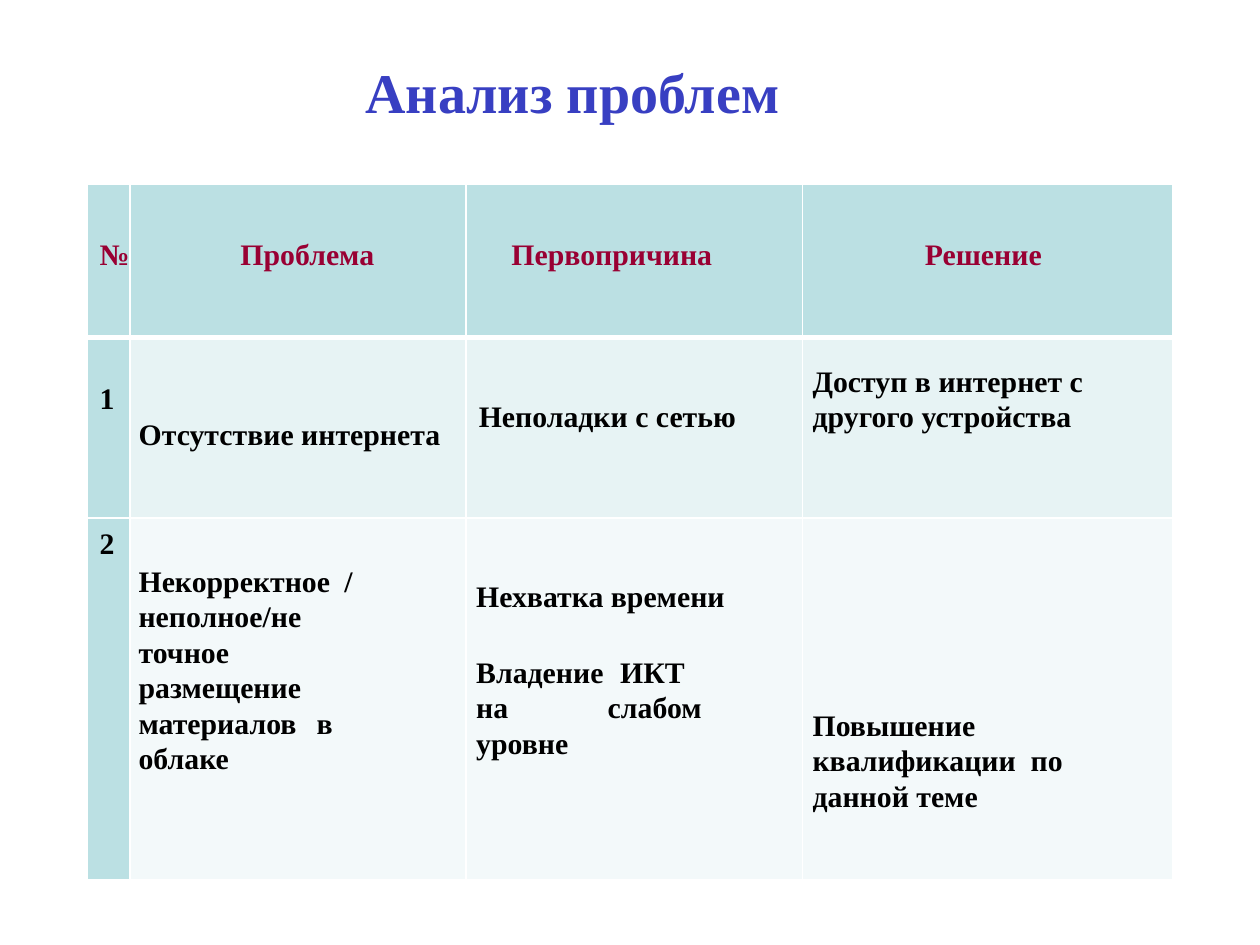
from dataclasses import dataclass

from lxml import etree
from pptx import Presentation
from pptx.dml.color import RGBColor
from pptx.enum import text
from pptx.oxml import ns
from pptx.util import Inches, Pt


@dataclass(frozen=True)
class Theme:
    font: str = "Times New Roman"
    title_size: float = 32
    table_size: float = 17
    title: str = "383FC2"
    heading: str = "990033"
    body: str = "000000"
    accent: str = "BBE0E3"
    light: str = "E7F3F4"
    pale: str = "F3F9FA"
    border: str = "FFFFFF"


@dataclass(frozen=True)
class Para:
    words: str
    left: float = 0.08
    right: float = 0
    align: text.PP_ALIGN = text.PP_ALIGN.LEFT
    before: float = 0


@dataclass(frozen=True)
class Entry:
    paras: tuple
    anchor: text.MSO_ANCHOR = text.MSO_ANCHOR.MIDDLE
    top: float = 0.06


THEME = Theme()
CENTER, JUSTIFY = text.PP_ALIGN.CENTER, text.PP_ALIGN.JUSTIFY
TOP, BOTTOM = text.MSO_ANCHOR.TOP, text.MSO_ANCHOR.BOTTOM
COLUMNS = (0.34, 2.67, 2.67, 2.94)
ROWS = (1.22, 1.43, 2.87)
ENTRIES = (
    (
        Entry((Para("№", 0.1),), BOTTOM),
        Entry((Para("Проблема", 0.16, align=CENTER),), BOTTOM),
        Entry((Para("Первопричина", 0.36),), BOTTOM),
        Entry((Para("Решение", 0, 0.06, CENTER),), BOTTOM),
    ),
    (
        Entry((Para("1", 0.1),)),
        Entry((Para("Отсутствие интернета", 0.07),), BOTTOM),
        Entry((Para("Неполадки с сетью", 0.1),), top=0.34),
        Entry((Para("Доступ в интернет с другого устройства"),)),
    ),
    (
        Entry((Para("2", 0.1),), TOP),
        Entry((Para("Некорректное /неполное/не точное  размещение  материалов в  облаке",
                    0.07, 0.89, JUSTIFY),)),
        Entry((Para("Нехватка времени"),
               Para("Владение ИКТ  на  слабом уровне", right=0.79, align=JUSTIFY, before=23))),
        Entry((Para("Повышение квалификации  по данной теме", right=0.5),), BOTTOM),
    ),
)


def add_run(paragraph, words, size, color):
    run = paragraph.add_run()
    run.text = words
    run.font.name = THEME.font
    run.font.size = Pt(size)
    run.font.bold = True
    run.font.color.rgb = RGBColor.from_string(color)


def set_borders(cell, widths):
    """Draw the borders, given in points for left, right, top and bottom."""
    properties = cell._tc.get_or_add_tcPr()
    for position, (side, width) in enumerate(zip("LRTB", widths)):
        line = etree.Element(ns.qn(f"a:ln{side}"), w=str(Pt(width)))
        fill = etree.SubElement(line, ns.qn("a:solidFill"))
        etree.SubElement(fill, ns.qn("a:srgbClr"), val=THEME.border)
        properties.insert(position, line)


def fill_cell(cell, entry, fill, color):
    cell.fill.solid()
    cell.fill.fore_color.rgb = RGBColor.from_string(fill)
    cell.margin_left, cell.margin_right = Inches(0), Inches(0.01)
    cell.margin_top, cell.margin_bottom = Inches(entry.top), Inches(0.52)
    cell.vertical_anchor = entry.anchor
    frame = cell.text_frame
    for index, para in enumerate(entry.paras):
        paragraph = frame.add_paragraph() if index else frame.paragraphs[0]
        paragraph.alignment = para.align
        paragraph.line_spacing = 1.07
        if para.before:
            paragraph.space_before = Pt(para.before)
        indents = paragraph._p.get_or_add_pPr()
        indents.set("marL", str(Inches(para.left)))
        indents.set("marR", str(Inches(para.right)))
        indents.set("indent", "0")
        add_run(paragraph, para.words, THEME.table_size, color)


def add_problem_table(slide):
    table = slide.shapes.add_table(
        len(ROWS), len(COLUMNS), Inches(0.69), Inches(1.46),
        Inches(sum(COLUMNS)), Inches(sum(ROWS))).table
    for column, width in zip(table.columns, COLUMNS):
        column.width = Inches(width)
    row_fills = (THEME.accent, THEME.light, THEME.pale)
    for r, (height, entries) in enumerate(zip(ROWS, ENTRIES)):
        table.rows[r].height = Inches(height)
        for c, entry in enumerate(entries):
            cell = table.cell(r, c)
            fill_cell(cell, entry, row_fills[r] if c else THEME.accent,
                      THEME.body if r else THEME.heading)
            set_borders(cell, (1, 1, 3 if r == 1 else 1, 1 if r else 3))


def set_title(slide, words):
    title = slide.shapes.title
    title.left, title.top = Inches(2.8), Inches(0.4)
    title.width, title.height = Inches(3.63), Inches(0.64)
    frame = title.text_frame
    frame.word_wrap = False
    frame.vertical_anchor = text.MSO_ANCHOR.MIDDLE
    frame.paragraphs[0].alignment = text.PP_ALIGN.LEFT
    add_run(frame.paragraphs[0], words, THEME.title_size, THEME.title)


def main():
    deck = Presentation()
    deck.slide_width, deck.slide_height = Inches(10), Inches(7.5)
    slide = deck.slides.add_slide(deck.slide_layouts[5])
    set_title(slide, "Анализ проблем")
    add_problem_table(slide)
    deck.save("out.pptx")


if __name__ == "__main__":
    main()
